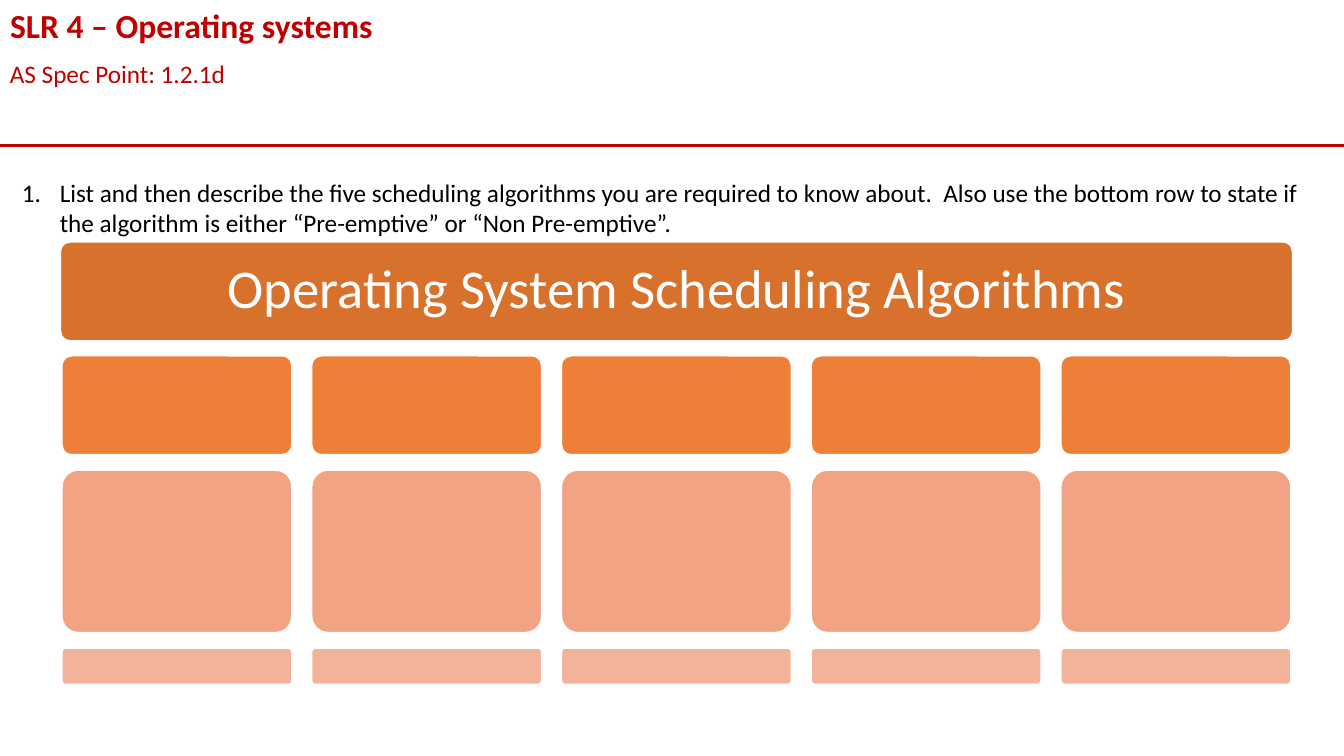
from lxml import etree
from pptx import Presentation
from pptx.dml.color import RGBColor
from pptx.enum.shapes import MSO_CONNECTOR, MSO_SHAPE
from pptx.enum.text import MSO_ANCHOR, MSO_AUTO_SIZE, PP_ALIGN
from pptx.oxml.ns import qn
from pptx.util import Inches, Pt

STRAIGHT = MSO_CONNECTOR.STRAIGHT
ROUNDED = MSO_SHAPE.ROUNDED_RECTANGLE
TOP, MIDDLE = MSO_ANCHOR.TOP, MSO_ANCHOR.MIDDLE
LEFT, CENTER = PP_ALIGN.LEFT, PP_ALIGN.CENTER
NO_FIT = MSO_AUTO_SIZE.NONE

THEME = {
    "font": "Calibri",
    "red": RGBColor(0xC0, 0x00, 0x00),
    "black": RGBColor(0x00, 0x00, 0x00),
    "white": RGBColor(0xFF, 0xFF, 0xFF),
    "banner": RGBColor(0xD7, 0x71, 0x2C),
    "name": RGBColor(0xED, 0x7F, 0x39),
    "description": RGBColor(0xF1, 0xA3, 0x83),
    "type": RGBColor(0xF3, 0xB2, 0x9A),
    "title_size": Pt(24),
    "body_size": Pt(18),
    "banner_size": Pt(39),
}


def write(box, text, size, color, bold=False, align=LEFT, anchor=TOP):
    frame = box.text_frame
    frame_format = {"word_wrap": True, "auto_size": NO_FIT, "vertical_anchor": anchor}
    for key, value in frame_format.items():
        setattr(frame, key, value)
    para = frame.paragraphs[0]
    para.alignment = align
    span = para.add_run()
    span.text = text
    span.font.color.rgb = THEME[color]
    for key, value in {"name": THEME["font"], "size": THEME[size], "bold": bold}.items():
        setattr(span.font, key, value)
    return para


def add_tile(left, top, width, height, color):
    tile = page.shapes.add_shape(
        ROUNDED, Inches(left), Inches(top), Inches(width), Inches(height))
    tile.adjustments[0] = 0.1
    tile.shadow.inherit = False
    tile.fill.solid()
    tile.fill.fore_color.rgb = THEME[color]
    tile.line.color.rgb = THEME["white"]
    tile.line.width = Pt(1)
    return tile


deck = Presentation()
deck.slide_width, deck.slide_height = Inches(13.33), Inches(7.5)
page = deck.slides.add_slide(deck.slide_layouts[5])

# Heading, specification point and rule
title = page.shapes.title
place = {"left": 0, "top": 0, "width": deck.slide_width, "height": Inches(0.5)}
for key, value in place.items():
    setattr(title, key, value)
write(title, "SLR 4 – Operating systems", "title_size", "red", bold=True)

spec_point = page.shapes.add_textbox(0, Inches(0.53), deck.slide_width, Inches(0.4))
write(spec_point, "AS Spec Point: 1.2.1d", "body_size", "red")

rule = page.shapes.add_connector(STRAIGHT, 0, Inches(1.44), deck.slide_width, Inches(1.44))
rule.line.color.rgb = THEME["red"]
rule.line.width = Pt(2.25)
etree.SubElement(rule._element.spPr, qn("a:effectLst"))

# Numbered question
question = page.shapes.add_textbox(Inches(0.12), Inches(1.71), Inches(13.1), Inches(0.71))
para = write(
    question,
    "List and then describe the five scheduling algorithms you are required to know "
    "about.  Also use the bottom row to state if the algorithm is either "
    "“Pre-emptive” or “Non Pre-emptive”.",
    "body_size", "black")
properties = para._p.get_or_add_pPr()
indent = Inches(0.375)
properties.set("marL", str(indent))
properties.set("indent", str(-indent))
etree.SubElement(properties, qn("a:buFont"), typeface="+mj-lt")
etree.SubElement(properties, qn("a:buAutoNum"), type="arabicPeriod")

# Banner across all columns
banner = add_tile(0.6, 2.4, 12.22, 0.98, "banner")
para = write(banner, "Operating System Scheduling Algorithms", "banner_size", "white",
             align=CENTER, anchor=MIDDLE)
para.line_spacing = 0.9

# Answer grid: five algorithms, with name, description and type rows
COLUMNS, GRID_LEFT, TILE_WIDTH, GAP = 5, 0.615, 2.28, 0.197
ROW_TOP, ROW_GAP = 3.53, 0.155
ROWS = [("name", 0.98), ("description", 1.61), ("type", 0.36)]
for color, height in ROWS:
    for column in range(COLUMNS):
        add_tile(GRID_LEFT + column * (TILE_WIDTH + GAP), ROW_TOP, TILE_WIDTH, height, color)
    ROW_TOP += height + ROW_GAP

deck.save("out.pptx")
